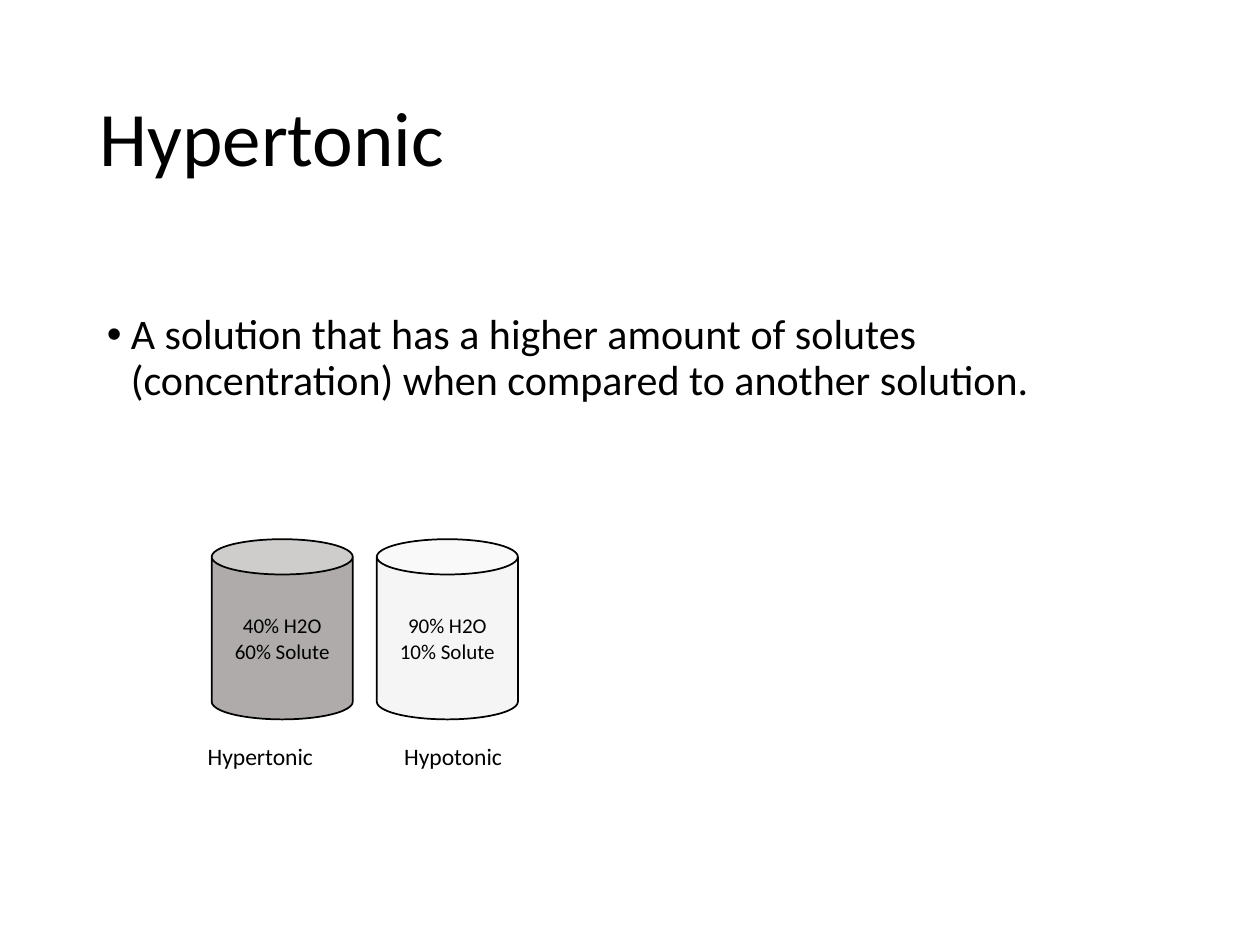
import pptx
import pptx.util
import pptx.dml.color
import pptx.enum.shapes
import pptx.enum.text
import lxml.etree

Inches, Pt = pptx.util.Inches, pptx.util.Pt
ALIGN = pptx.enum.text.PP_ALIGN
ANCHOR = pptx.enum.text.MSO_ANCHOR

TITLE = "Hypertonic"
DEFINITION = ("A solution that has a higher amount of solutes "
              "(concentration) when compared to another solution.")
# name, label left edge, fill, contents
SOLUTIONS = [
    ("Hypertonic", 1.55, "AFABAB", ["40% H2O", "60% Solute"]),
    ("Hypotonic", 3.11, "F5F5F5", ["90% H2O", "10% Solute"]),
]
BEAKER_LEFT, BEAKER_TOP, BEAKER_PITCH = 1.68, 4.28, 1.31
BEAKER_WIDTH, BEAKER_HEIGHT = 1.12, 1.43
LABEL_TOP, LABEL_WIDTH, LABEL_HEIGHT = 5.84, 2.27, 0.33


def color(hex_string):
    return pptx.dml.color.RGBColor.from_string(hex_string)


def write(shape, lines, size, align=ALIGN.LEFT, anchor=ANCHOR.TOP,
          line_spacing=None, space_before=None):
    frame = shape.text_frame
    frame.word_wrap = True
    frame.auto_size = pptx.enum.text.MSO_AUTO_SIZE.NONE
    frame.vertical_anchor = anchor
    frame.text = "\n".join(lines)
    for paragraph in frame.paragraphs:
        paragraph.alignment = align
        paragraph.line_spacing = line_spacing
        paragraph.space_before = space_before
        font = paragraph.runs[0].font
        font.name, font.size = "Calibri", Pt(size)
        font.color.rgb = color("000000")


def add_bullet(paragraph, indent):
    properties = paragraph._p.get_or_add_pPr()
    properties.set("marL", str(Inches(indent)))
    properties.set("indent", str(-Inches(indent)))
    for tag, attribute, value in [("a:buFont", "typeface", "Arial"),
                                  ("a:buChar", "char", "•")]:
        bullet = lxml.etree.SubElement(properties, pptx.oxml.ns.qn(tag))
        bullet.set(attribute, value)


def add_text_box(slide, left, top, width, height):
    return slide.shapes.add_textbox(*map(Inches, (left, top, width, height)))


def add_beaker(slide, column, fill, contents):
    beaker = slide.shapes.add_shape(
        pptx.enum.shapes.MSO_SHAPE.CAN,
        Inches(BEAKER_LEFT + column * BEAKER_PITCH), Inches(BEAKER_TOP),
        Inches(BEAKER_WIDTH), Inches(BEAKER_HEIGHT))
    beaker.shadow.inherit = False
    beaker.fill.solid()
    beaker.fill.fore_color.rgb = color(fill)
    beaker.line.color.rgb = color("000000")
    beaker.line.width = Pt(1)
    write(beaker, contents, 12, align=ALIGN.CENTER, anchor=ANCHOR.MIDDLE)


def main():
    deck = pptx.Presentation()
    deck.slide_width, deck.slide_height = Inches(10), Inches(7.5)
    slide = deck.slides.add_slide(deck.slide_layouts[5])

    title = slide.shapes.title
    title.left, title.top = Inches(0.69), Inches(0.4)
    title.width, title.height = Inches(8.62), Inches(1.45)
    write(title, [TITLE], 44, anchor=ANCHOR.MIDDLE, line_spacing=0.9)

    definition = add_text_box(slide, 0.75, 2.44, 8.5, 2.81)
    write(definition, [DEFINITION], 24, line_spacing=0.9, space_before=Pt(7.5))
    add_bullet(definition.text_frame.paragraphs[0], 0.19)

    for column, (name, label_left, fill, contents) in enumerate(SOLUTIONS):
        add_beaker(slide, column, fill, contents)
        label = add_text_box(slide, label_left, LABEL_TOP, LABEL_WIDTH, LABEL_HEIGHT)
        write(label, [name], 13.5)

    deck.save("out.pptx")


if __name__ == "__main__":
    main()
